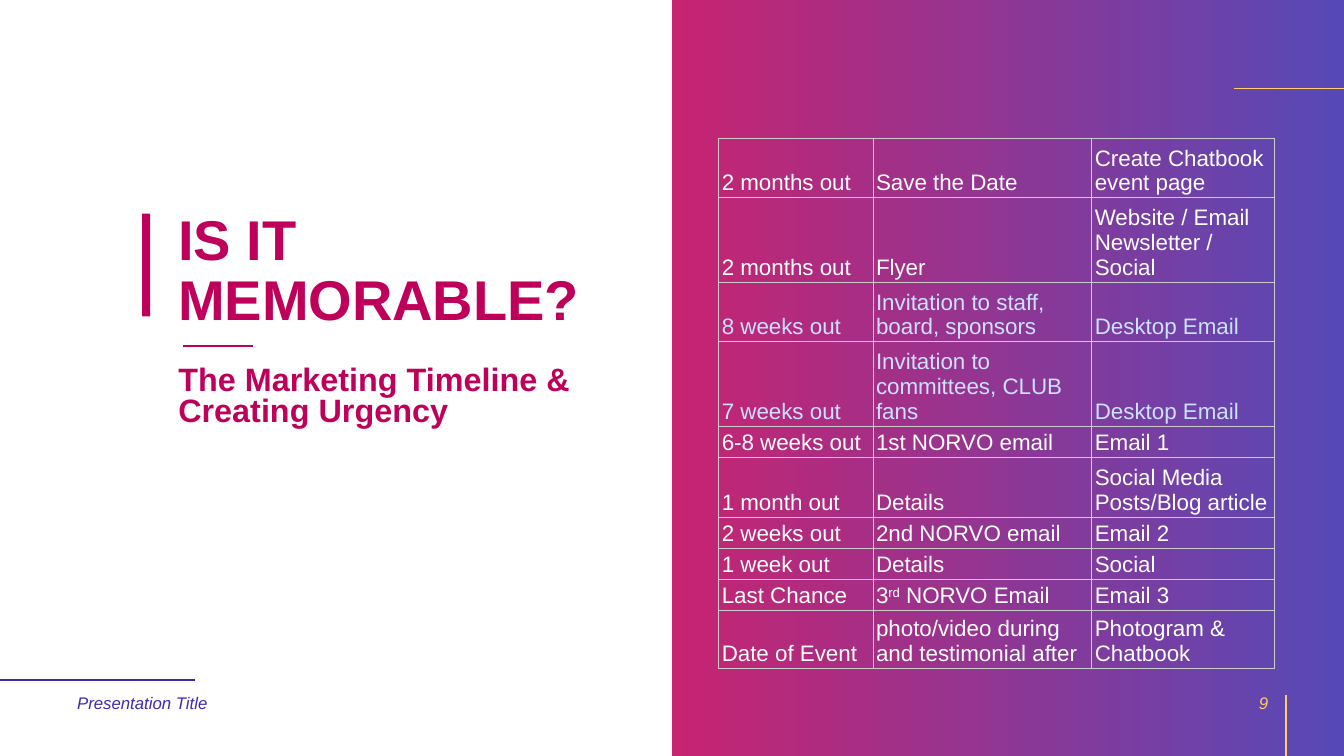
"""Build the marketing timeline slide with its gradient panel and schedule table."""
from lxml import etree
from pptx import Presentation
from pptx.dml.color import RGBColor
from pptx.enum.shapes import MSO_CONNECTOR, MSO_SHAPE
from pptx.enum.text import MSO_ANCHOR, PP_ALIGN
from pptx.oxml import parse_xml
from pptx.oxml.ns import nsdecls, qn
from pptx.util import Inches, Pt

RECT = MSO_SHAPE.RECTANGLE
STRAIGHT = MSO_CONNECTOR.STRAIGHT
TOP, MIDDLE, BOTTOM = MSO_ANCHOR.TOP, MSO_ANCHOR.MIDDLE, MSO_ANCHOR.BOTTOM
LEFT, RIGHT = PP_ALIGN.LEFT, PP_ALIGN.RIGHT
PINK = RGBColor(0xBE, 0x00, 0x5A)
INDIGO = RGBColor(0x3B, 0x2C, 0xAC)
GOLD = RGBColor(0xFF, 0xCD, 0x6B)
WHITE = RGBColor(0xFF, 0xFF, 0xFF)
PALE_BLUE = RGBColor(0xCC, 0xE0, 0xFF)

prs = Presentation()
prs.slide_width, prs.slide_height = Inches(13.333), Inches(7.5)
X, Y = prs.slide_width / 100, prs.slide_height / 100
s = prs.slides.add_slide(prs.slide_layouts[6])


def write(tf, text, size, color, bold=False, italic=False, align=LEFT,
          anchor=MIDDLE, spacing=1.0):
    """Fill a text frame; text between carets is superscript."""
    tf.word_wrap = True
    tf.vertical_anchor = anchor
    p = tf.paragraphs[0]
    p.alignment, p.line_spacing = align, spacing
    for i, part in enumerate(text.split("^")):
        r = p.add_run()
        r.text = part
        r.font.name, r.font.size = "Arial", Pt(size)
        r.font.bold, r.font.italic = bold, italic
        r.font.color.rgb = color
        if i % 2:
            r.font._element.set("baseline", "30000")


panel = s.shapes.add_shape(RECT, int(50 * X), 0, int(50 * X), int(100 * Y))
panel.fill.gradient()
panel.fill.gradient_angle = 0
for stop, color, position in zip(panel.fill.gradient_stops, (PINK, INDIGO), (0, 1)):
    stop.color.rgb, stop.position = color, position
for clr in panel._element.spPr.iter(qn("a:srgbClr")):
    etree.SubElement(clr, qn("a:alpha")).set("val", "85000")

bar = s.shapes.add_shape(RECT, int(10.57 * X), int(28.27 * Y), int(0.6 * X), int(13.6 * Y))
bar.fill.solid()
bar.fill.fore_color.rgb = PINK
for sp in (panel, bar):
    sp.line.fill.background()
    sp.shadow.inherit = False

rules = [
    (13.65, 45.73, 18.82, 45.73, PINK, 1.5),
    (91.8, 11.73, 100, 11.73, GOLD, 0.5),
    (0, 90, 14.48, 90, INDIGO, 1.5),
    (95.7, 100, 95.7, 91.87, GOLD, 1.5),
]
for x1, y1, x2, y2, color, width in rules:
    rule = s.shapes.add_connector(STRAIGHT, int(x1 * X), int(y1 * Y), int(x2 * X), int(y2 * Y))
    rule.line.color.rgb, rule.line.width = color, Pt(width)
    etree.SubElement(rule._element.spPr, qn("a:effectLst"))

texts = [
    (12.53, 24.8, 33.98, 22.4, "IS IT MEMORABLE?",
     dict(size=40, color=PINK, bold=True, spacing=0.9)),
    (12.53, 47.87, 33.98, 10.13, "The Marketing Timeline & Creating Urgency",
     dict(size=23.1, color=PINK, bold=True, spacing=0.8, anchor=TOP)),
    (5, 90.27, 26.7, 5.33, "Presentation Title",
     dict(size=12, color=INDIGO, italic=True)),
    (72.6, 90.27, 22.5, 5.33, "9",
     dict(size=12, color=GOLD, italic=True, align=RIGHT)),
]
for x, y, w, h, text, style in texts:
    box = s.shapes.add_textbox(int(x * X), int(y * Y), int(w * X), int(h * Y))
    write(box.text_frame, text, **style)

TALL, MEDIUM, SHORT = 7.87, 6.8, 4.13
timeline = [
    (TALL, WHITE, "2 months out", "Save the Date", "Create Chatbook event page"),
    (TALL, WHITE, "2 months out", "Flyer", "Website / Email Newsletter / Social"),
    (TALL, PALE_BLUE, "8 weeks out", "Invitation to staff, board, sponsors", "Desktop Email"),
    (MEDIUM, PALE_BLUE, "7 weeks out", "Invitation to committees, CLUB fans", "Desktop Email"),
    (SHORT, WHITE, "6-8 weeks out", "1st NORVO email", "Email 1"),
    (TALL, WHITE, "1 month out", "Details", "Social Media Posts/Blog article"),
    (SHORT, WHITE, "2 weeks out", "2nd NORVO email", "Email 2"),
    (SHORT, WHITE, "1 week out", "Details", "Social"),
    (SHORT, WHITE, "Last Chance", "3^rd^ NORVO Email", "Email 3"),
    (SHORT, WHITE, "Date of Event", "photo/video during and testimonial after",
     "Photogram & Chatbook"),
]
col_widths = (11.48, 16.28, 13.58)
frame = s.shapes.add_table(len(timeline), len(col_widths), int(53.48 * X), int(18.27 * Y),
                           int(sum(col_widths) * X), int(sum(row[0] for row in timeline) * Y))
table = frame.table
table.first_row = table.horz_banding = False
for column, width in zip(table.columns, col_widths):
    column.width = int(width * X)
for row, (height, color, *labels) in zip(table.rows, timeline):
    row.height = int(height * Y)
    for cell, label in zip(row.cells, labels):
        cell.margin_left = cell.margin_right = Inches(0.03)
        cell.margin_top = cell.margin_bottom = Inches(0.02)
        write(cell.text_frame, label, size=16, color=color)
        cell.vertical_anchor = BOTTOM
        tcPr = cell._tc.get_or_add_tcPr()
        for side in ("lnL", "lnR", "lnT", "lnB"):
            tcPr.append(parse_xml(
                f'<a:{side} {nsdecls("a")} w="9525"><a:solidFill>'
                f'<a:srgbClr val="CCCCCC"/></a:solidFill></a:{side}>'))
        cell.fill.background()

prs.save("out.pptx")
